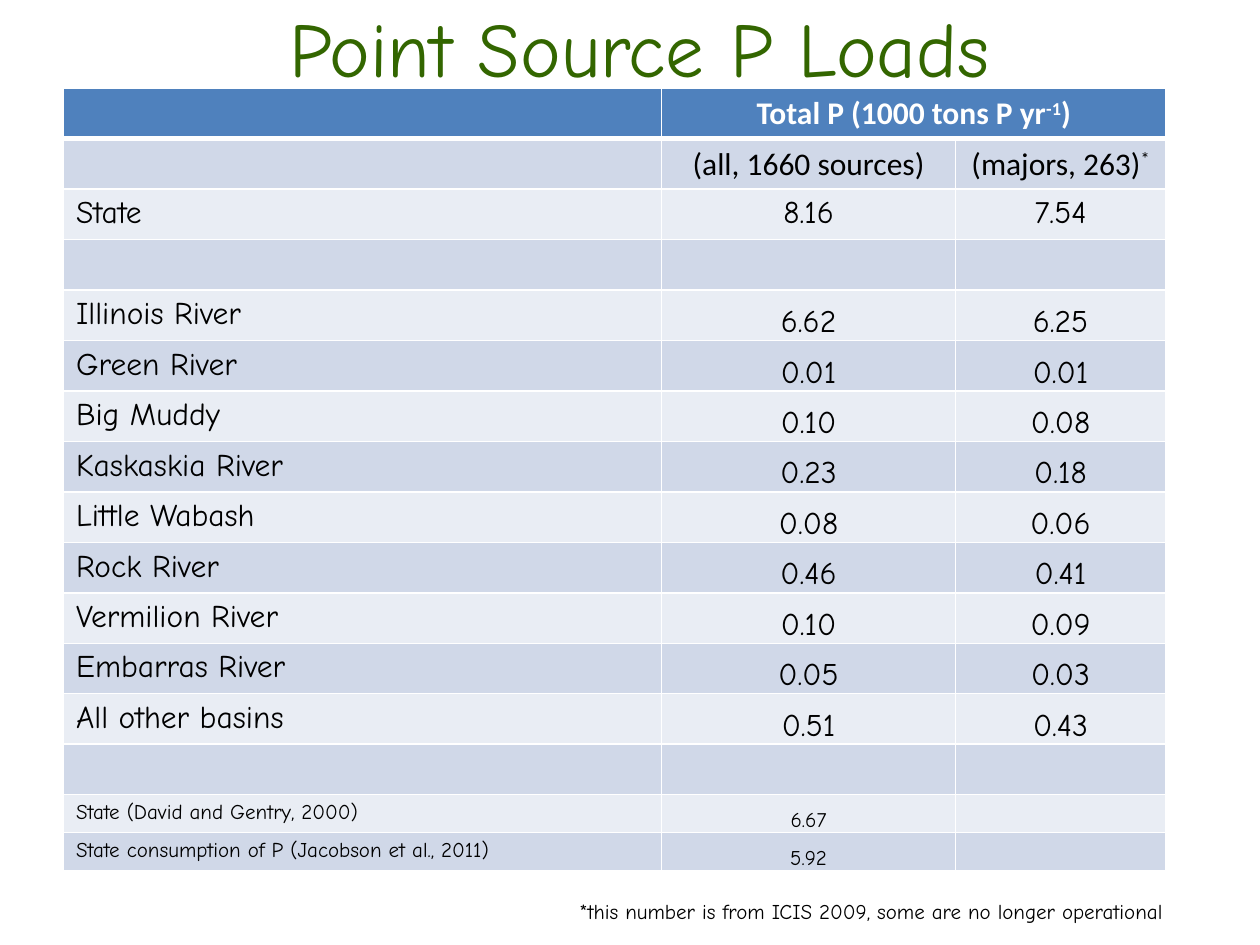
from lxml import etree
from pptx import Presentation
from pptx.dml.color import RGBColor
from pptx.enum.text import MSO_ANCHOR, PP_ALIGN
from pptx.oxml.ns import qn
from pptx.util import Cm, Pt

CENTER, LEFT = PP_ALIGN.CENTER, PP_ALIGN.LEFT
MIDDLE, BOTTOM = MSO_ANCHOR.MIDDLE, MSO_ANCHOR.BOTTOM

TITLE = "Point Source P Loads"
FOOTNOTE = "*this number is from ICIS 2009, some are no longer operational"
# Text between carets is superscript.
HEADINGS = [
    ("", "Total P (1000 tons P yr^-1^)", ""),
    ("", "(all, 1660 sources)", "(majors, 263)^*^"),
]
STATE = [("State", "8.16", "7.54"), ("", "", "")]
BASINS = [
    ("Illinois River", "6.62", "6.25"),
    ("Green River", "0.01", "0.01"),
    ("Big Muddy", "0.10", "0.08"),
    ("Kaskaskia River", "0.23", "0.18"),
    ("Little Wabash", "0.08", "0.06"),
    ("Rock River", "0.46", "0.41"),
    ("Vermilion River", "0.10", "0.09"),
    ("Embarras River", "0.05", "0.03"),
    ("All other basins", "0.51", "0.43"),
    ("", "", ""),
]
REFERENCES = [
    ("State (David and Gentry, 2000)", "6.67", ""),
    ("State consumption of P (Jacobson et al., 2011)", "5.92", ""),
]
ROWS = HEADINGS + STATE + BASINS + REFERENCES
FIRST_BASIN = len(HEADINGS + STATE)
FIRST_REFERENCE = FIRST_BASIN + len(BASINS)

COLORS = {"title": "336600", "text": "000000", "white": "FFFFFF",
          "header": "4F81BD", "odd": "D0D8E8", "even": "E9EDF4"}
HEADING_FONT, BODY_FONT = "Calibri", "Comic Neue"
COLUMN_WIDTHS = [12.06, 5.92, 4.24]
ROW_HEIGHT, REFERENCE_HEIGHT = 0.99, 0.75


def color(name):
    return RGBColor.from_string(COLORS[name])


def write(text_frame, text, size, font, color_name, align=LEFT, bold=False):
    paragraph = text_frame.paragraphs[0]
    paragraph.alignment = align
    for position, part in enumerate(text.split("^")):
        if not part:
            continue
        run = paragraph.add_run()
        run.text = part
        run.font.size = Pt(size)
        run.font.name = font
        run.font.bold = bold
        run.font.color.rgb = color(color_name)
        if position % 2:
            run.font._element.set("baseline", "30000")
    if not text:
        # An empty cell keeps its row height through its end mark.
        end = etree.SubElement(paragraph._p, qn("a:endParaRPr"), sz=str(size * 100))
        etree.SubElement(end, qn("a:latin"), typeface=font)


def add_text(slide, box, text, size, color_name, align, anchor, wrap):
    shape = slide.shapes.add_textbox(*(Cm(length) for length in box))
    shape.text_frame.word_wrap = wrap
    shape.text_frame.vertical_anchor = anchor
    write(shape.text_frame, text, size, BODY_FONT, color_name, align)


def add_borders(cell, row):
    widths = {"lnL": 1, "lnR": 1, "lnT": 3 if row == 1 else 1, "lnB": 3 if row == 0 else 1}
    properties = cell._tc.get_or_add_tcPr()
    for side, width in widths.items():
        line = etree.SubElement(properties, qn(f"a:{side}"), w=str(Pt(width)))
        fill = etree.SubElement(line, qn("a:solidFill"))
        etree.SubElement(fill, qn("a:srgbClr"), val=COLORS["white"])


def format_cell(cell, row, column, text):
    is_header, is_heading = row == 0, row < len(HEADINGS)
    add_borders(cell, row)
    cell.fill.solid()
    cell.fill.fore_color.rgb = color("header" if is_header else "odd" if row % 2 else "even")
    if row >= FIRST_BASIN and column and text:
        cell.vertical_anchor = BOTTOM
        cell.margin_left = cell.margin_right = cell.margin_top = Cm(0.03)
        cell.margin_bottom = 0
    write(cell.text_frame, text,
          size=12 if row >= FIRST_REFERENCE else 18,
          font=HEADING_FONT if is_heading and text else BODY_FONT,
          color_name="white" if is_header else "text",
          align=CENTER if column else LEFT,
          bold=is_header)


def add_loads_table(slide):
    heights = [REFERENCE_HEIGHT if row >= FIRST_REFERENCE else ROW_HEIGHT
               for row in range(len(ROWS))]
    table = slide.shapes.add_table(
        len(ROWS), len(COLUMN_WIDTHS), Cm(1.28), Cm(1.78),
        Cm(sum(COLUMN_WIDTHS)), Cm(sum(heights))).table
    for column, width in zip(table.columns, COLUMN_WIDTHS):
        column.width = Cm(width)
    for row, height in zip(table.rows, heights):
        row.height = Cm(height)
    for row, texts in enumerate(ROWS):
        for column, text in enumerate(texts):
            format_cell(table.cell(row, column), row, column, text)
    table.cell(0, 1).merge(table.cell(0, 2))


def main():
    presentation = Presentation()
    presentation.slide_width, presentation.slide_height = Cm(25.4), Cm(19.05)
    slide = presentation.slides.add_slide(presentation.slide_layouts[6])
    add_text(slide, (1.47, 0, 22.86, 1.9), TITLE, 44, "title", CENTER, MIDDLE, True)
    add_loads_table(slide)
    add_text(slide, (11.43, 17.98, 13.34, 0.76), FOOTNOTE, 12, "text", LEFT,
             MSO_ANCHOR.TOP, False)
    presentation.save("out.pptx")


if __name__ == "__main__":
    main()
